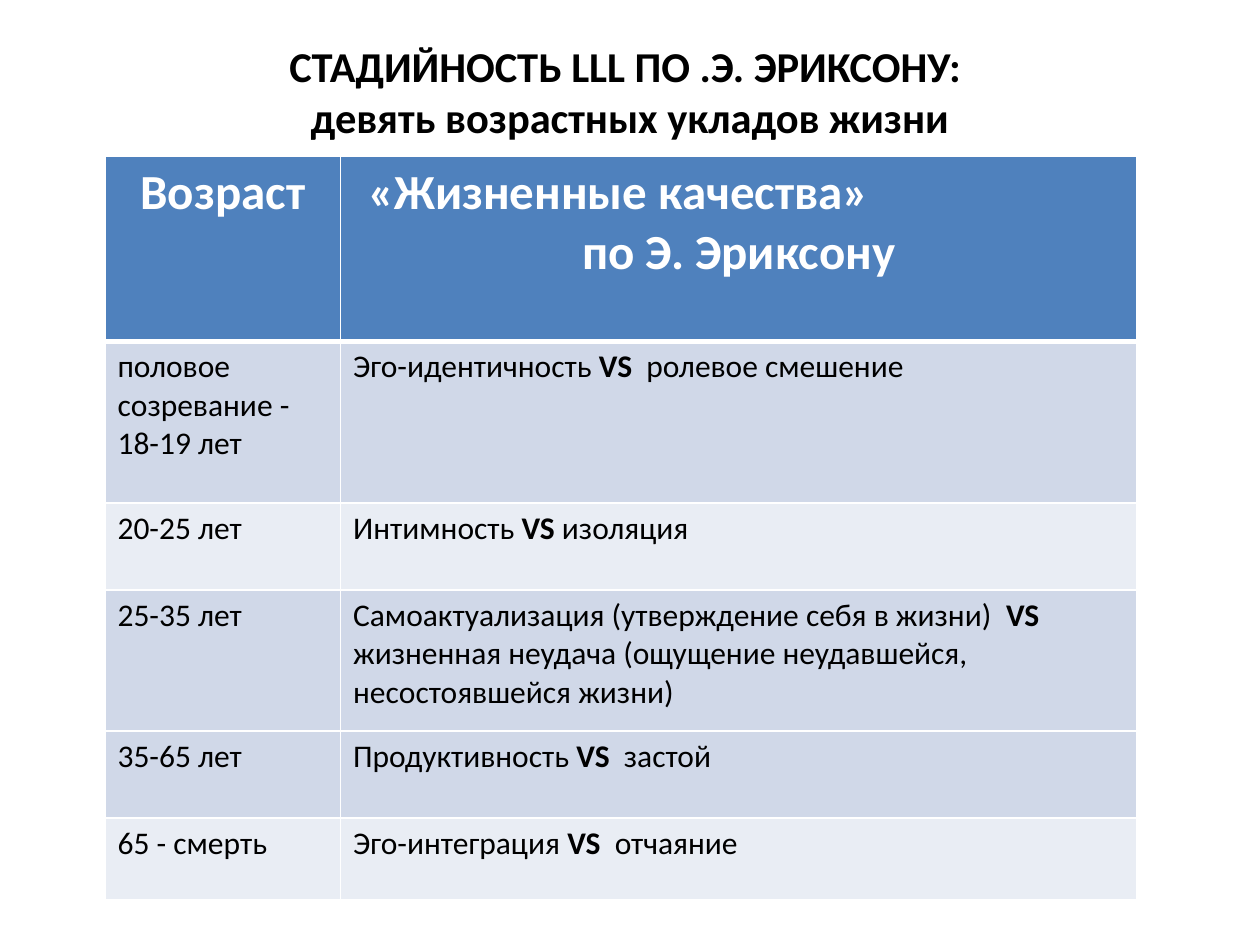
import lxml.etree
import pptx
import pptx.dml.color
import pptx.enum.text
import pptx.oxml.ns
import pptx.util

Pt = pptx.util.Pt
ALIGN = pptx.enum.text.PP_ALIGN
WHITE, BLACK = "FFFFFF", "000000"
HEADER_FILL, DARK_BAND, LIGHT_BAND = "4F81BD", "D0D8E8", "E9EDF4"

COLUMN_WIDTHS = [134.6, 455]
HEADER_HEIGHT = 105.8
# age, parts of the quality (every second part is bold), row height, fill
STAGES = [
    ("половое созревание - 18-19 лет",
     ["Эго-идентичность ", "VS ", " ролевое смешение"], 92.2, DARK_BAND),
    ("20-25 лет", ["Интимность ", "VS", " изоляция"], 49.7, LIGHT_BAND),
    ("25-35 лет",
     ["Самоактуализация (утверждение себя в жизни)  ", "VS ",
      "жизненная неудача (ощущение неудавшейся, несостоявшейся жизни)"],
     80.6, DARK_BAND),
    ("35-65 лет", ["Продуктивность ", "VS ", " застой"], 49.7, DARK_BAND),
    ("65 - смерть", ["Эго-интеграция ", "VS ", " отчаяние"], 46.8, LIGHT_BAND),
]


def rgb(hex_colour):
    return pptx.dml.color.RGBColor.from_string(hex_colour)


def add_run(paragraph, text, size, colour, bold):
    run = paragraph.add_run()
    run.text = text
    font_format = {"name": "Calibri", "size": Pt(size), "bold": bold}
    for attribute, value in font_format.items():
        setattr(run.font, attribute, value)
    run.font.color.rgb = rgb(colour)


def add_title(slide, lines):
    frame = slide.shapes.add_textbox(Pt(36), Pt(21.6), Pt(648), Pt(90)).text_frame
    frame_format = {
        "word_wrap": True,
        "vertical_anchor": pptx.enum.text.MSO_ANCHOR.TOP,
        "margin_top": Pt(1),
    }
    for attribute, value in frame_format.items():
        setattr(frame, attribute, value)
    paragraph = frame.paragraphs[0]
    paragraph.alignment = ALIGN.CENTER
    for index, line in enumerate(lines):
        if index:
            paragraph.add_line_break()
        add_run(paragraph, line, 24.3, BLACK, True)


def set_borders(cell, widths):
    """Draw white borders; widths maps a side (L, R, T, B) to points."""
    properties = cell._tc.get_or_add_tcPr()
    for position, (side, width) in enumerate(widths.items()):
        line = lxml.etree.Element(
            pptx.oxml.ns.qn(f"a:ln{side}"), w=str(int(Pt(width))))
        fill = lxml.etree.SubElement(line, pptx.oxml.ns.qn("a:solidFill"))
        lxml.etree.SubElement(fill, pptx.oxml.ns.qn("a:srgbClr"), val=WHITE)
        properties.insert(position, line)


def style_cell(cell, fill, top=1, bottom=1):
    cell.fill.solid()
    cell.fill.fore_color.rgb = rgb(fill)
    set_borders(cell, {"L": 1, "R": 1, "T": top, "B": bottom})


def fill_header(age, quality):
    for cell in (age, quality):
        style_cell(cell, HEADER_FILL, bottom=3)
    quality.text_frame.add_paragraph()
    first, second = quality.text_frame.paragraphs
    headings = [
        (age.text_frame.paragraphs[0], "Возраст", ALIGN.CENTER),
        (first, "«Жизненные качества»", ALIGN.LEFT),
        (second, "по Э. Эриксону", ALIGN.CENTER),
    ]
    for paragraph, text, alignment in headings:
        paragraph.alignment = alignment
        add_run(paragraph, text, 28, WHITE, True)
    first._p.get_or_add_pPr().set("marL", str(int(Pt(8.5))))


def add_stage_table(slide):
    heights = [HEADER_HEIGHT] + [stage[2] for stage in STAGES]
    table = slide.shapes.add_table(
        len(heights), len(COLUMN_WIDTHS), Pt(60), Pt(89.4),
        Pt(sum(COLUMN_WIDTHS)), Pt(sum(heights))).table
    for column, width in zip(table.columns, COLUMN_WIDTHS):
        column.width = Pt(width)
    for row, height in zip(table.rows, heights):
        row.height = Pt(height)

    fill_header(table.cell(0, 0), table.cell(0, 1))
    for row, (age, quality, _, fill) in enumerate(STAGES, start=1):
        for column, parts in enumerate([[age], quality]):
            cell = table.cell(row, column)
            style_cell(cell, fill, top=3 if row == 1 else 1)
            for index, part in enumerate(parts):
                add_run(cell.text_frame.paragraphs[0], part, 18, BLACK, index % 2 == 1)


def main():
    presentation = pptx.Presentation()
    presentation.slide_width, presentation.slide_height = Pt(720), Pt(540)
    slide = presentation.slides.add_slide(presentation.slide_layouts[6])
    add_title(slide, ["СТАДИЙНОСТЬ LLL ПО .Э. ЭРИКСОНУ: ",
                      "девять возрастных укладов жизни"])
    add_stage_table(slide)
    presentation.save("out.pptx")


if __name__ == "__main__":
    main()
